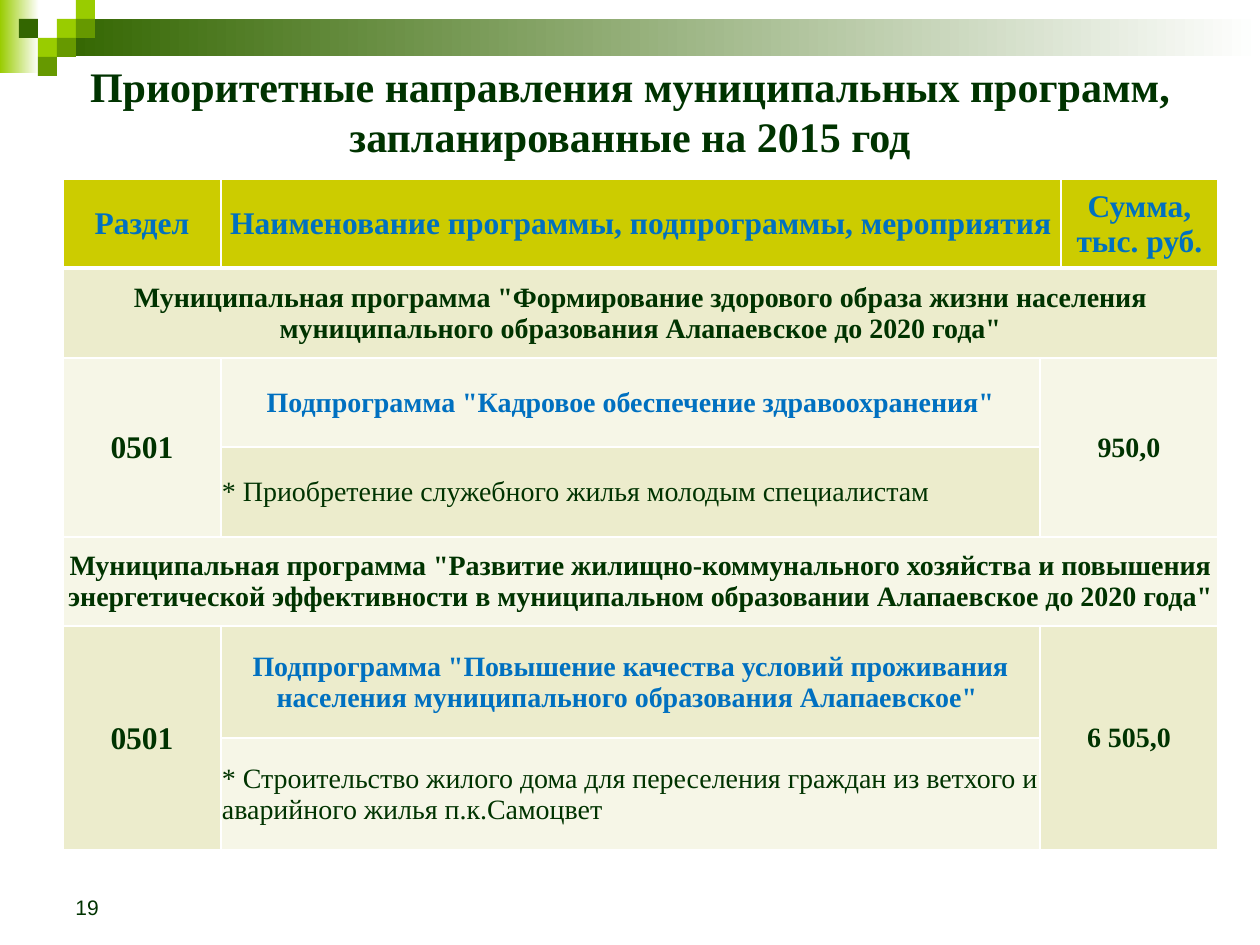
from lxml import etree
from pptx import Presentation
from pptx.dml.color import RGBColor
from pptx.enum.shapes import MSO_SHAPE
from pptx.enum.text import MSO_ANCHOR, PP_ALIGN
from pptx.oxml.ns import qn
from pptx.util import Emu, Pt

RECT = MSO_SHAPE.RECTANGLE
LEFT, CENTER = PP_ALIGN.LEFT, PP_ALIGN.CENTER
MIDDLE, BOTTOM = MSO_ANCHOR.MIDDLE, MSO_ANCHOR.BOTTOM

PX_PER_INCH = 126
SERIF, SANS = "Times New Roman", "Arial"
DARK, BLUE, WHITE = "003300", "0070C0", "FFFFFF"
FOREST, GREEN, LIME = "336600", "669900", "99CC00"
OLIVE, BAND, PALE = "CCCC00", "ECECCC", "F6F6E7"


def px(n):
    return Emu(round(n * 914400 / PX_PER_INCH))


def rgb(value):
    return RGBColor.from_string(value)


def set_borders(cell, **widths):
    """Draw white cell borders; widths are points by side, L, R, T and B."""
    tc_pr = cell._tc.get_or_add_tcPr()
    for side, width in widths.items():
        ln = etree.SubElement(tc_pr, qn(f"a:ln{side}"), w=str(Pt(width)))
        fill = etree.SubElement(ln, qn("a:solidFill"))
        etree.SubElement(fill, qn("a:srgbClr"), val=WHITE)


class SlideBuilder:
    """Holds the text style and the current slide."""

    def __init__(self, slide, font=SERIF, color=DARK):
        self.s = slide
        self.font = font
        self.color = color

    def format_text(self, tf, text, size, bold=True, align=CENTER, color=None, font=None):
        tf.text = text
        tf.word_wrap = True
        for p in tf.paragraphs:
            p.alignment = align
            for r in p.runs:
                r.font.name = font or self.font
                r.font.size = Pt(size)
                r.font.bold = bold
                r.font.color.rgb = rgb(color or self.color)

    def rect(self, x, y, w, h, *colors):
        """One colour gives a solid fill, two a left-to-right gradient."""
        sp = self.s.shapes.add_shape(RECT, px(x), px(y), px(w), px(h))
        sp.shadow.inherit = False
        sp.line.fill.background()
        if len(colors) == 1:
            sp.fill.solid()
            sp.fill.fore_color.rgb = rgb(colors[0])
        else:
            sp.fill.gradient()
            sp.fill.gradient_angle = 0
            for stop, color in zip(sp.fill.gradient_stops, colors):
                stop.color.rgb = rgb(color)

    def text(self, x, y, w, h, text, size, anchor, **style):
        tf = self.s.shapes.add_textbox(px(x), px(y), px(w), px(h)).text_frame
        tf.vertical_anchor = anchor
        self.format_text(tf, text, size, **style)

    def table(self, x, y, cols, rows, cells):
        """cells: (row, column, row span, column span, fill, text, size, style)."""
        frame = self.s.shapes.add_table(
            len(rows), len(cols), px(x), px(y), px(sum(cols)), px(sum(rows)))
        table = frame.table
        table.first_row = table.horz_banding = False
        for column, width in zip(table.columns, cols):
            column.width = px(width)
        for row, height in zip(table.rows, rows):
            row.height = px(height)
        for i in range(len(rows)):
            for j in range(len(cols)):
                set_borders(table.cell(i, j), L=1, R=1,
                            T=3 if i == 1 else 1, B=3 if i == 0 else 1)
        for i, j, down, across, fill, text, size, style in cells:
            cell = table.cell(i, j)
            if down * across > 1:
                cell.merge(table.cell(i + down - 1, j + across - 1))
            cell.fill.solid()
            cell.fill.fore_color.rgb = rgb(fill)
            cell.vertical_anchor = MIDDLE
            cell.margin_left = cell.margin_right = cell.margin_top = px(1)
            cell.margin_bottom = 0
            self.format_text(cell.text_frame, text, size, **style)


def program_cells(row, fills, title, code, subprogram, measure, amount):
    """A title row, then a code and an amount beside two stacked cells."""
    title_fill, main_fill, measure_fill = fills
    return [
        (row, 0, 1, 4, title_fill, title, 16, {}),
        (row + 1, 0, 2, 1, main_fill, code, 18, {}),
        (row + 1, 1, 1, 1, main_fill, subprogram, 16, {"color": BLUE}),
        (row + 1, 2, 2, 2, main_fill, amount, 16, {}),
        (row + 2, 1, 1, 1, measure_fill, measure, 16, {"bold": False, "align": LEFT}),
    ]


def main():
    prs = Presentation()
    prs.slide_width, prs.slide_height = px(1260), px(945)
    b = SlideBuilder(prs.slides.add_slide(prs.slide_layouts[6]))

    b.rect(0, 0, 39, 73, LIME, WHITE)
    b.rect(57, 19, 1203, 37, FOREST, WHITE)
    square = 19
    for col, row, color in [(3, 1, LIME), (4, 0, LIME), (4, 1, GREEN), (2, 2, LIME),
                            (1, 1, FOREST), (3, 2, GREEN), (2, 3, GREEN)]:
        b.rect(col * square, row * square, square, square, color)

    b.text(63, 63, 1134, 95,
           "Приоритетные направления муниципальных программ, запланированные на 2015 год",
           24, MIDDLE)

    header = {"color": BLUE}
    cells = [
        (0, 0, 1, 1, OLIVE, "Раздел", 18, header),
        (0, 1, 1, 2, OLIVE, "Наименование программы, подпрограммы, мероприятия", 18, header),
        (0, 3, 1, 1, OLIVE, "Сумма, тыс. руб.", 18, header),
    ]
    cells += program_cells(
        1, (BAND, PALE, BAND),
        'Муниципальная программа "Формирование здорового образа жизни населения '
        'муниципального образования Алапаевское до 2020 года"',
        "0501",
        'Подпрограмма "Кадровое обеспечение здравоохранения"',
        "* Приобретение служебного жилья молодым специалистам",
        "950,0")
    cells += program_cells(
        4, (PALE, BAND, PALE),
        'Муниципальная программа "Развитие жилищно-коммунального хозяйства и повышения '
        'энергетической эффективности в муниципальном образовании Алапаевское до 2020 года"',
        "0501",
        'Подпрограмма "Повышение качества условий проживания населения '
        'муниципального образования Алапаевское" ',
        "* Строительство жилого дома для переселения граждан из ветхого и "
        "аварийного жилья п.к.Самоцвет",
        "6 505,0")
    b.table(63, 179, [158, 819, 21, 157], [89, 90, 89, 90, 89, 112, 112], cells)

    b.text(63, 861, 294, 65, "19", 12, BOTTOM, bold=False, align=LEFT, font=SANS)
    prs.save("out.pptx")


if __name__ == "__main__":
    main()
